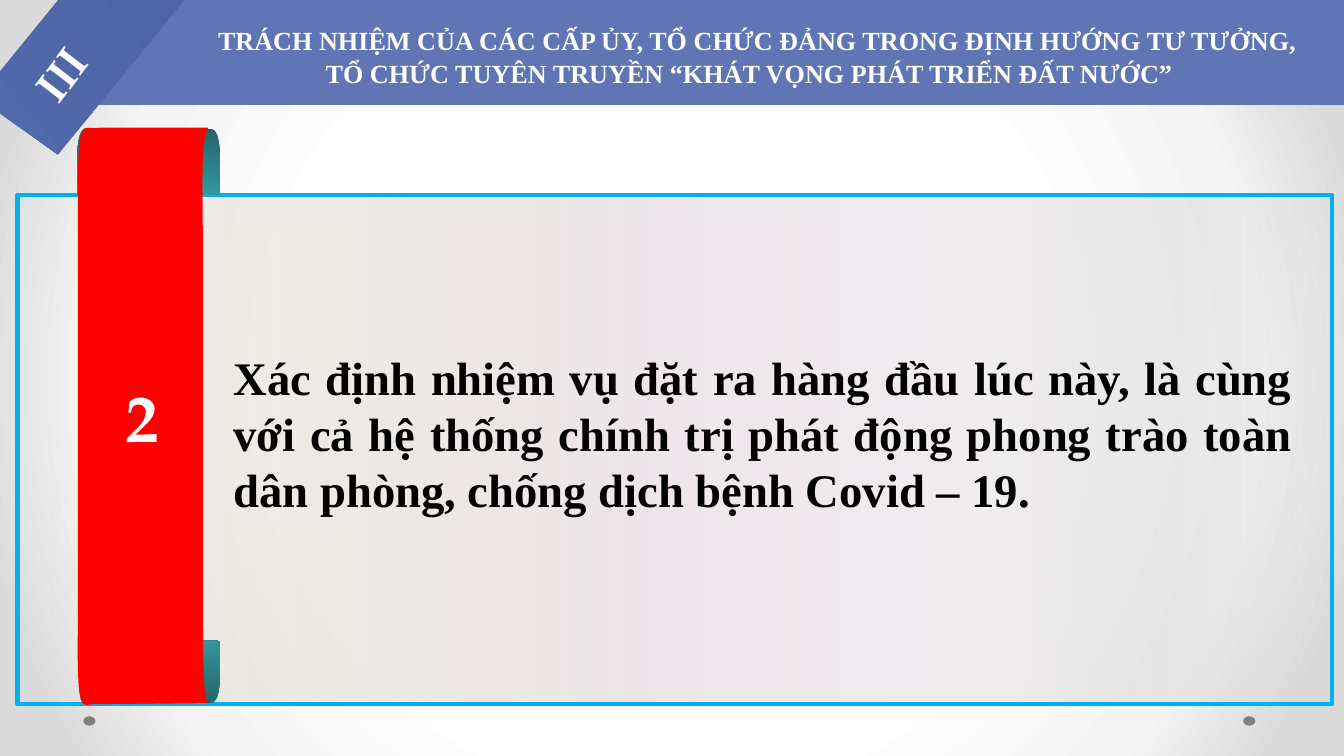
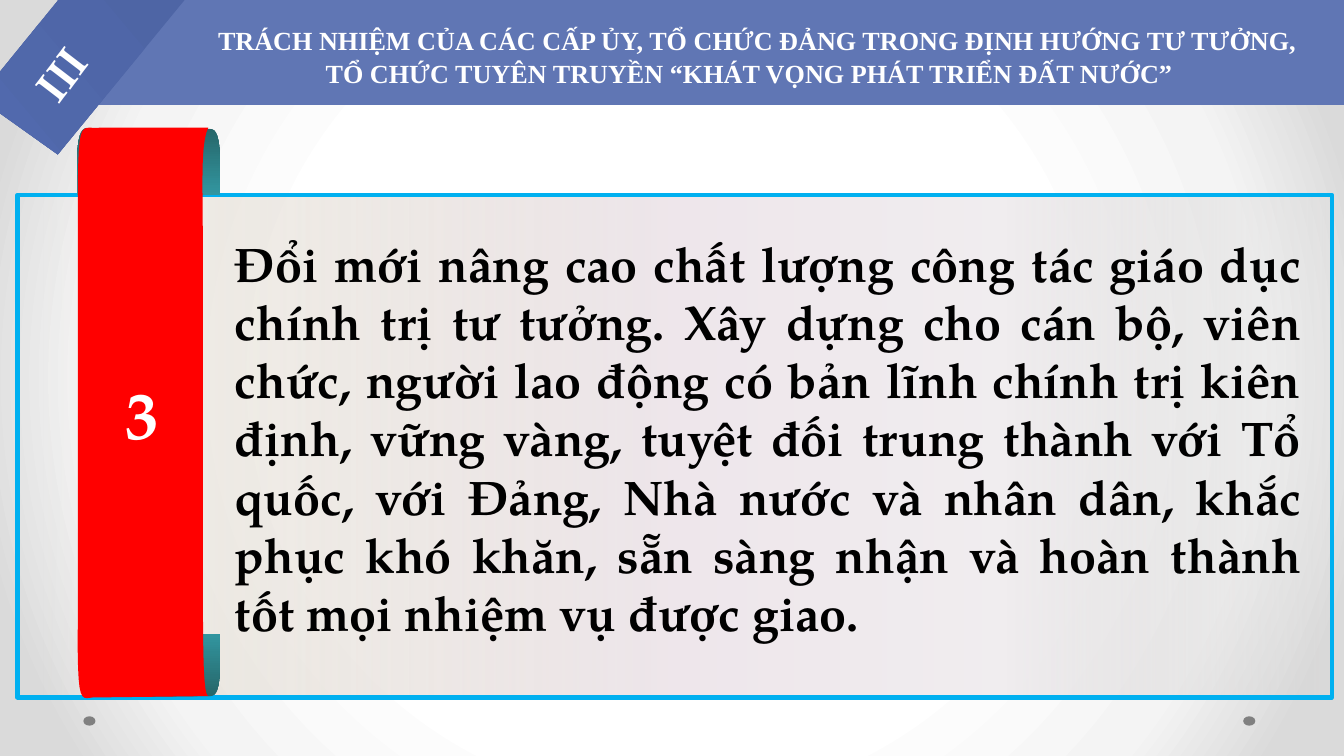
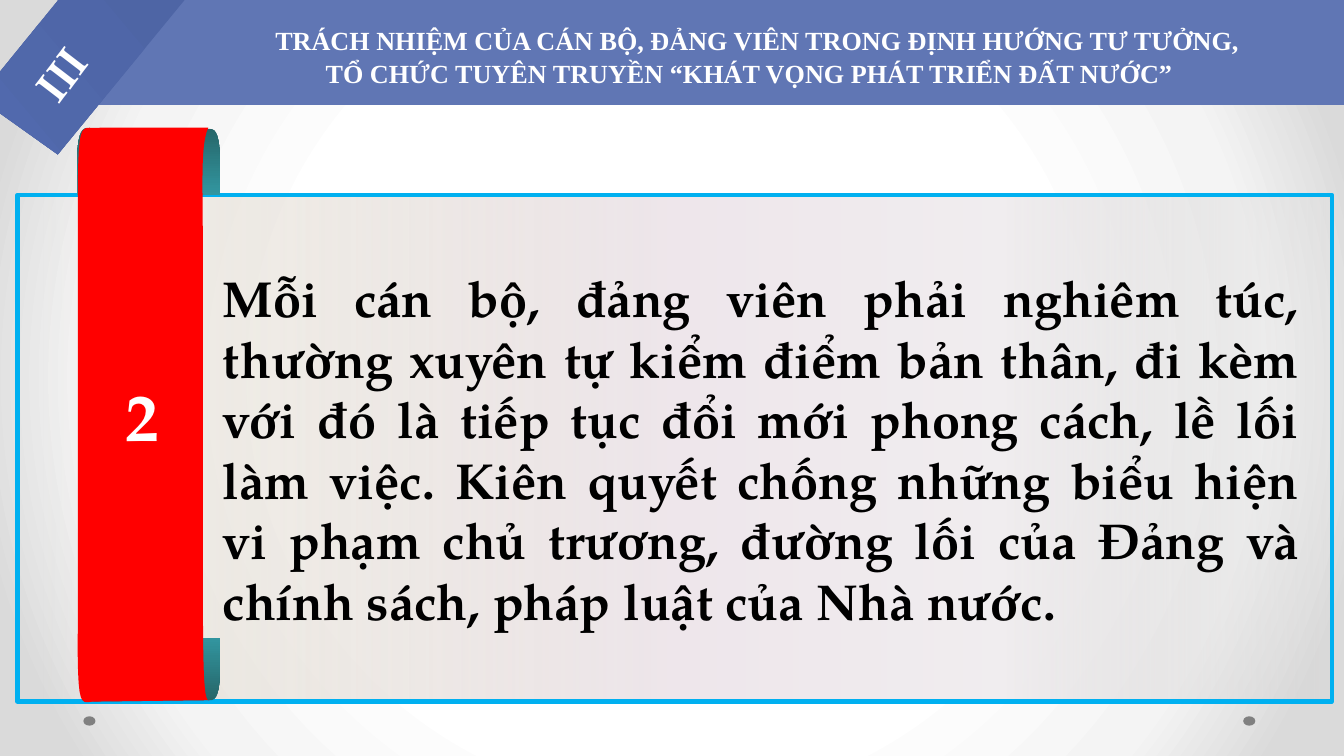
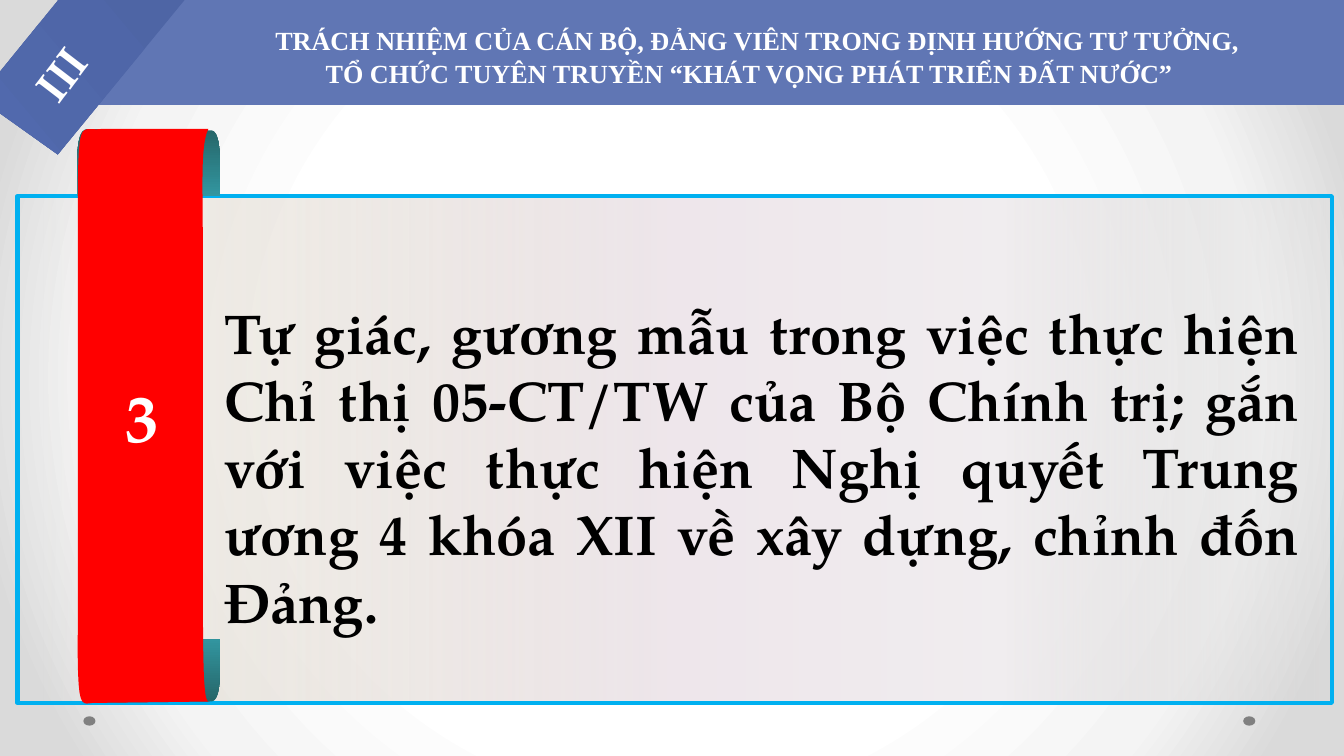
from dataclasses import dataclass
from typing import NamedTuple

from lxml.etree import SubElement
from pptx import Presentation
from pptx.dml.color import RGBColor
from pptx.enum.shapes import MSO_SHAPE
from pptx.enum.text import MSO_AUTO_SIZE, PP_ALIGN
from pptx.oxml import parse_xml
from pptx.oxml.ns import nsdecls, qn
from pptx.util import Inches, Pt

SERIF = "Times New Roman"
PAGELLA = "TeX Gyre Pagella"
WHITE, BLACK = "FFFFFF", "000000"
BAND_BLUE, BORDER_BLUE, RIBBON_RED, DOT_GREY = "6076B4", "00B0F0", "FF0000", "808080"

PARTY_TITLE = "TRÁCH NHIỆM CỦA CÁC CẤP ỦY, TỔ CHỨC ĐẢNG TRONG ĐỊNH HƯỚNG TƯ TƯỞNG,"
MEMBER_TITLE = "TRÁCH NHIỆM CỦA CÁN BỘ, ĐẢNG VIÊN TRONG ĐỊNH HƯỚNG TƯ TƯỞNG,"
SUBTITLE = "TỔ CHỨC TUYÊN TRUYỀN “KHÁT VỌNG PHÁT TRIỂN ĐẤT NƯỚC”"


class Area(NamedTuple):
    left: float
    top: float
    width: float
    height: float


class Stop(NamedTuple):
    position: int
    color: str
    opacity: int = 100


class Style(NamedTuple):
    font: str
    size: float
    color: str = WHITE
    align: PP_ALIGN = PP_ALIGN.CENTER


class Line(NamedTuple):
    x: float
    y: float


class Curve(NamedTuple):
    control_1: tuple[float, float]
    control_2: tuple[float, float]
    end: tuple[float, float]


@dataclass
class Content:
    title: str
    number: str
    ribbon_top: float
    ribbon_bottom: float
    body: str
    body_area: Area
    body_font: str
    body_size: float


PAGE_STOPS = [Stop(50, WHITE), Stop(76, "F4F4F4"), Stop(92, "DADADA")]
PANEL_STOPS = [Stop(0, "C8C7C6", 0), Stop(25, "F0EDEF"), Stop(50, "EEE6EB"),
               Stop(85, "E2DCD1", 52), Stop(98, "EFEBE5", 0)]
FOLD_STOPS = [Stop(0, "266568"), Stop(100, "3296A0")]
CORNER_STOPS = [Stop(0, "4E65A5"), Stop(100, "5169AD")]

CONTENTS = [
    Content(PARTY_TITLE, "2", 0.95, 5.24,
            "Xác định nhiệm vụ đặt ra hàng đầu lúc này, là cùng với cả hệ thống chính trị "
            "phát động phong trào toàn dân phòng, chống dịch bệnh Covid – 19.",
            Area(1.64, 2.55, 8.07, 1.36), SERIF, 25),
    Content(PARTY_TITLE, "3", 0.95, 5.19,
            "Đổi mới nâng cao chất lượng công tác giáo dục chính trị tư tưởng. Xây dựng cho "
            "cán bộ, viên chức, người lao động có bản lĩnh chính trị kiên định, vững vàng, "
            "tuyệt đối trung thành với Tổ quốc, với Đảng, Nhà nước và nhân dân, khắc phục "
            "khó khăn, sẵn sàng nhận và hoàn thành tốt mọi nhiệm vụ được giao.",
            Area(1.65, 1.69, 8.14, 3.16), PAGELLA, 26),
    Content(MEMBER_TITLE, "2", 0.95, 5.22,
            "Mỗi cán bộ, đảng viên phải nghiêm túc, thường xuyên tự kiểm điểm bản thân, đi "
            "kèm với đó là tiếp tục đổi mới phong cách, lề lối làm việc. Kiên quyết chống "
            "những biểu hiện vi phạm chủ trương, đường lối của Đảng và chính sách, pháp "
            "luật của Nhà nước.",
            Area(1.56, 1.94, 8.2, 2.83), PAGELLA, 27),
    Content(MEMBER_TITLE, "3", 0.96, 5.23,
            "Tự giác, gương mẫu trong việc thực hiện Chỉ thị 05-CT/TW của Bộ Chính trị; gắn "
            "với việc thực hiện Nghị quyết Trung ương 4 khóa XII về xây dựng, chỉnh đốn Đảng.",
            Area(1.57, 2.17, 8.2, 2.12), PAGELLA, 30),
]


def rgb(color: str) -> RGBColor:
    return RGBColor.from_string(color)


def set_gradient(properties, stops: list[Stop], angle: float | None = None) -> None:
    """Swap a solid fill for a linear gradient, or a circular one without an angle."""
    gradient = parse_xml(f'<a:gradFill {nsdecls("a")} rotWithShape="1"/>')
    stop_list = SubElement(gradient, qn("a:gsLst"))
    for stop in stops:
        mark = SubElement(stop_list, qn("a:gs"), pos=str(stop.position * 1000))
        color = SubElement(mark, qn("a:srgbClr"), val=stop.color)
        if stop.opacity < 100:
            SubElement(color, qn("a:alpha"), val=str(stop.opacity * 1000))
    if angle is None:
        circle = SubElement(gradient, qn("a:path"), path="circle")
        SubElement(circle, qn("a:fillToRect"), {side: "50000" for side in "ltrb"})
    else:
        SubElement(gradient, qn("a:lin"), ang=str(int(angle * 60000)), scaled="0")
    solid = properties.find(qn("a:solidFill"))
    properties.replace(solid, gradient)


def paint(shape, fill: str | list[Stop], angle: float = 0) -> None:
    shape.shadow.inherit = False
    shape.line.fill.background()
    shape.fill.solid()
    if isinstance(fill, str):
        shape.fill.fore_color.rgb = rgb(fill)
    else:
        set_gradient(shape._element.spPr, fill, angle)


def add_block(page, kind: MSO_SHAPE, area: Area, fill: str | list[Stop], angle: float = 0):
    shape = page.shapes.add_shape(kind, *map(Inches, area))
    paint(shape, fill, angle)
    return shape


def add_outline(page, start: tuple[float, float], steps: list[Line | Curve],
                fill: str | list[Stop], angle: float = 0) -> None:
    """Draw a closed outline; curves are followed in short straight steps."""
    points = [start]
    for step in steps:
        if isinstance(step, Line):
            points.append(step)
            continue
        corners = (points[-1], *step)
        for i in range(1, 13):
            t = i / 12
            weights = ((1 - t) ** 3, 3 * t * (1 - t) ** 2, 3 * t * t * (1 - t), t ** 3)
            points.append(tuple(sum(w * corner[axis] for w, corner in zip(weights, corners))
                                for axis in (0, 1)))
    vertices = [(Inches(x), Inches(y)) for x, y in points]
    builder = page.shapes.build_freeform(*vertices[0], scale=1.0)
    builder.add_line_segments(vertices[1:], close=True)
    paint(builder.convert_to_shape(), fill, angle)


def add_text(page, area: Area, lines: list[str], style: Style):
    box = page.shapes.add_textbox(*map(Inches, area))
    frame = box.text_frame
    frame.word_wrap = True
    frame.auto_size = MSO_AUTO_SIZE.SHAPE_TO_FIT_TEXT
    for index, line in enumerate(lines):
        para = frame.paragraphs[0] if index == 0 else frame.add_paragraph()
        para.alignment = style.align
        span = para.add_run()
        span.text = line
        span.font.name = style.font
        span.font.size = Pt(style.size)
        span.font.bold = True
        span.font.color.rgb = rgb(style.color)
    return box


def draw_background(page) -> None:
    page.background.fill.solid()
    set_gradient(page._element.find(".//" + qn("p:bgPr")), PAGE_STOPS)
    for left in (9.25, 0.62):
        add_block(page, MSO_SHAPE.OVAL, Area(left, 5.33, 0.09, 0.07), DOT_GREY)


def draw_header(page, title: str) -> None:
    add_block(page, MSO_SHAPE.RECTANGLE, Area(0.43, -0.01, 9.57, 0.79), BAND_BLUE)
    add_outline(page, (-0.16, 0.73), [Line(0.43, 1.15), Line(1.39, -0.02), Line(0.45, -0.02)],
                CORNER_STOPS, 140)
    chapter = add_text(page, Area(0.04, 0.3, 0.82, 0.5), ["III"], Style(PAGELLA, 24))
    chapter.rotation = 307.5
    heading = add_text(page, Area(1.15, 0.13, 8.85, 0.57), [title, SUBTITLE], Style(SERIF, 14))
    first, second = heading.text_frame.paragraphs
    first._p.get_or_add_pPr().set("marL", str(Inches(0.12)))
    second.space_before = Pt(1)


def draw_ribbon(page, number: str, top: float, bottom: float) -> None:
    # Panel behind the ribbon
    panel = add_block(page, MSO_SHAPE.RECTANGLE,
                      Area(0.13, top + 0.5, 9.78, bottom - top - 0.5), PANEL_STOPS, 180)
    panel.line.color.rgb = rgb(BORDER_BLUE)
    panel.line.width = Pt(2.25)

    # Folds at both ends, darkest at the outer edge
    add_outline(page, (1.64, top + 0.5), [
        Line(0.57, top + 0.5),
        Curve((0.57, top + 0.09), (0.58, top - 0.01), (0.67, top)),
        Line(1.56, top + 0.01),
        Curve((1.64, top), (1.64, top + 0.17), (1.64, top + 0.5)),
    ], FOLD_STOPS, 90)
    add_outline(page, (1.64, bottom - 0.47), [
        Line(0.6, bottom - 0.48),
        Curve((0.61, bottom - 0.09), (0.61, bottom), (0.7, bottom)),
        Line(1.56, bottom - 0.01),
        Curve((1.64, bottom), (1.64, bottom - 0.16), (1.64, bottom - 0.47)),
    ], FOLD_STOPS, 270)

    # Red strip with its number
    add_outline(page, (1.55, top), [
        Line(0.75, top),
        Curve((0.61, top + 0.02), (0.58, top - 0.11), (0.58, top + 0.49)),
        Line(0.58, bottom - 0.67),
        Curve((0.57, bottom + 0.14), (0.6, bottom - 0.01), (0.72, bottom)),
        Line(1.56, bottom - 0.01),
        Curve((1.52, bottom + 0.01), (1.51, bottom - 0.15), (1.51, bottom - 0.82)),
        Line(1.51, top + 0.96),
        Curve((1.51, top + 0.39), (1.49, top + 0.13), (1.55, top)),
    ], RIBBON_RED)
    middle = (top + bottom) / 2
    add_text(page, Area(0.71, middle - 0.35, 0.7, 0.7), [number], Style(PAGELLA, 36))


def main() -> None:
    deck = Presentation()
    deck.slide_width = Inches(10)
    deck.slide_height = Inches(10) * 9 // 16
    for content in CONTENTS:
        page = deck.slides.add_slide(deck.slide_layouts[6])
        draw_background(page)
        draw_header(page, content.title)
        draw_ribbon(page, content.number, content.ribbon_top, content.ribbon_bottom)
        add_text(page, content.body_area, [content.body],
                 Style(content.body_font, content.body_size, BLACK, PP_ALIGN.JUSTIFY))
    deck.save("out.pptx")


if __name__ == "__main__":
    main()
